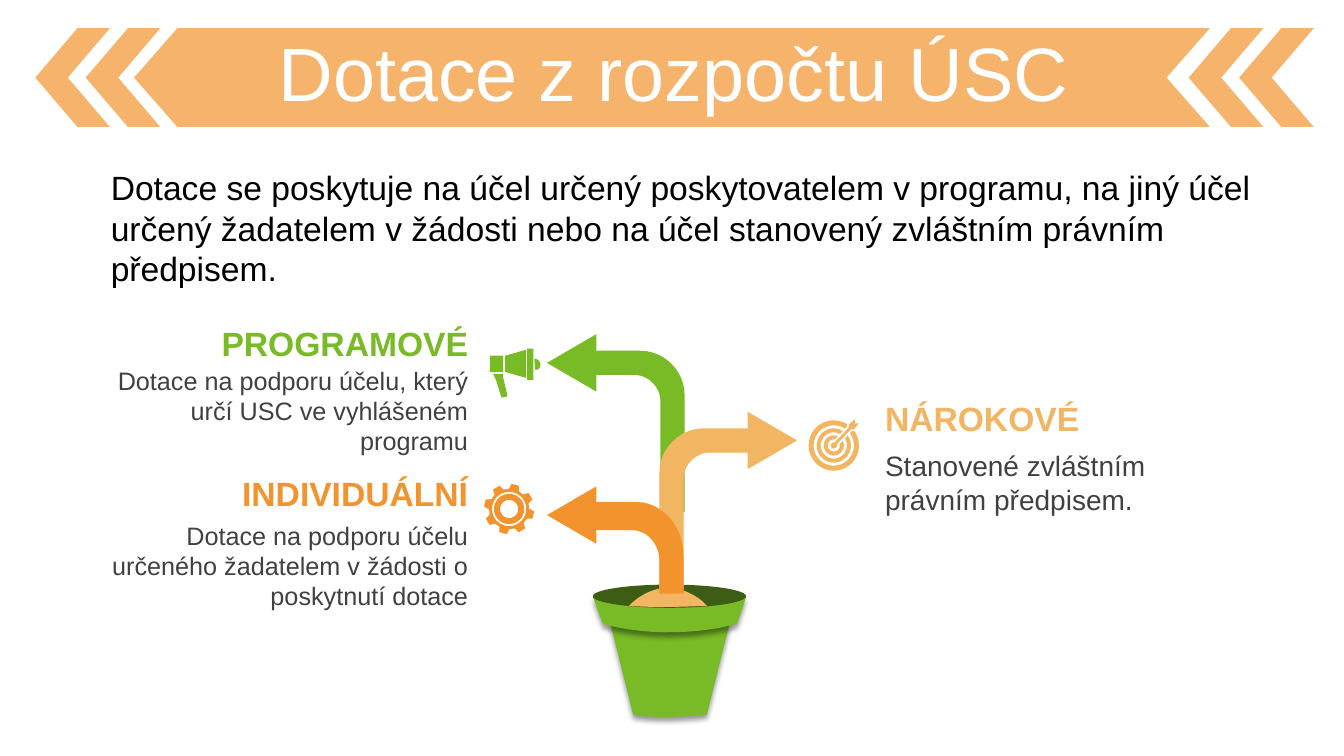
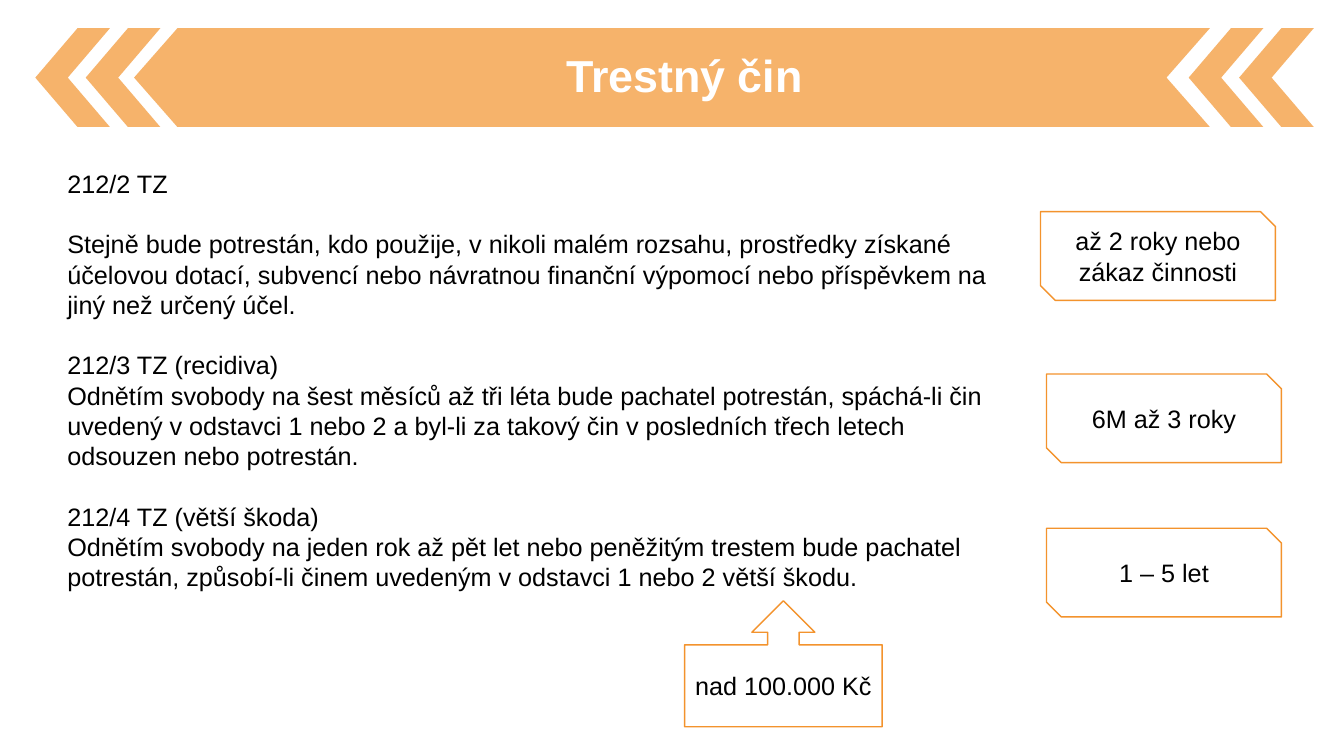
from math import cos, radians, sin

from lxml import etree
from pptx import Presentation
from pptx.dml.color import RGBColor
from pptx.enum.shapes import MSO_SHAPE
from pptx.enum.text import MSO_ANCHOR, PP_ALIGN
from pptx.oxml.ns import qn
from pptx.util import Inches, Pt

ORANGE = RGBColor(0xF3, 0x93, 0x2D)
SAND = RGBColor(0xF2, 0xB6, 0x62)
GREEN = RGBColor(0x79, 0xBA, 0x27)
DARK_GREEN = RGBColor(0x3D, 0x5D, 0x14)
GREY = RGBColor(0x40, 0x40, 0x40)
BLACK = RGBColor(0, 0, 0)
WHITE = RGBColor(0xFF, 0xFF, 0xFF)

LEFT, CENTER, RIGHT = PP_ALIGN.LEFT, PP_ALIGN.CENTER, PP_ALIGN.RIGHT
TOP, MIDDLE = MSO_ANCHOR.TOP, MSO_ANCHOR.MIDDLE
CHEVRON, TRIANGLE, OVAL = MSO_SHAPE.CHEVRON, MSO_SHAPE.ISOSCELES_TRIANGLE, MSO_SHAPE.OVAL
SNIPPED, CALLOUT = MSO_SHAPE.SNIP_2_DIAG_RECTANGLE, MSO_SHAPE.UP_ARROW_CALLOUT

FONT = "Arial"
SLIDE_WIDTH, SLIDE_HEIGHT = 13.33, 7.5
BAND_TOP, BAND_HEIGHT, BAND_OPACITY = 0.28, 0.98, 70
CURVE_STEPS = 12


def polar(center, radius, degrees):
    """Point at a clockwise angle from straight up."""
    angle = radians(degrees)
    return center[0] + radius * sin(angle), center[1] - radius * cos(angle)


def circle(center, radius):
    return [polar(center, radius, degrees) for degrees in range(0, 360, 10)]


def gear(center, teeth, first, outer, root):
    points = []
    for tooth in range(teeth):
        middle = first + tooth * 360 / teeth
        for radius, offset in ((root, -15), (outer, -8.5), (outer, 8.5), (root, 15)):
            points.append(polar(center, radius, middle + offset))
    return points


def box_points(left, top, right, bottom):
    return [(left, top), (right, top), (right, bottom), (left, bottom)]


def flatten(contour):
    """Turn steps of 2 numbers (line) or 6 numbers (cubic curve) into points."""
    points = []
    for step in contour:
        if len(step) == 2:
            points.append(step)
            continue
        start = points[-1]
        first, second, end = step[:2], step[2:4], step[4:]
        for index in range(1, CURVE_STEPS + 1):
            t = index / CURVE_STEPS
            u = 1 - t
            points.append(tuple(
                u ** 3 * a + 3 * u * u * t * b + 3 * u * t * t * c + t ** 3 * d
                for a, b, c, d in zip(start, first, second, end)))
    return points


class Designer:
    def __init__(self):
        self.deck = Presentation()
        self.deck.slide_width = Inches(SLIDE_WIDTH)
        self.deck.slide_height = Inches(SLIDE_HEIGHT)
        self.page = None

    def new_page(self):
        self.page = self.deck.slides.add_slide(self.deck.slide_layouts[6])
        for left in (0.35, 0.85, 11.79, 12.29):
            chevron = self.shape(CHEVRON, (left, BAND_TOP, 0.74, BAND_HEIGHT), ORANGE,
                                 rotation=180, opacity=BAND_OPACITY)
            chevron.adjustments[0] = 0.565
        bottom, middle = BAND_TOP + BAND_HEIGHT, BAND_TOP + BAND_HEIGHT / 2
        self.outline([[(1.76, BAND_TOP), (12, BAND_TOP), (11.57, middle),
                       (12, bottom), (1.76, bottom), (1.33, middle)]],
                     ORANGE, opacity=BAND_OPACITY)

    def paint(self, shape, fill, line=None, line_width=1, opacity=None):
        shape.shadow.inherit = False
        shape.fill.solid()
        shape.fill.fore_color.rgb = fill
        if opacity:
            color = shape._element.spPr.find(qn("a:solidFill"))[0]
            etree.SubElement(color, qn("a:alpha"), val=str(opacity * 1000))
        if line is None:
            shape.line.fill.background()
        else:
            shape.line.color.rgb = line
            shape.line.width = Pt(line_width)
        return shape

    def shape(self, kind, place, fill, rotation=0, **style):
        shape = self.page.shapes.add_shape(kind, *map(Inches, place))
        shape.rotation = rotation
        return self.paint(shape, fill, **style)

    def outline(self, contours, fill, **style):
        """Freeform of closed contours; a contour inside another cuts a hole."""
        builder = None
        for contour in contours:
            points = [(Inches(x), Inches(y)) for x, y in flatten(contour)]
            if builder is None:
                builder = self.page.shapes.build_freeform(*points[0])
            else:
                builder.move_to(*points[0])
            builder.add_line_segments(points[1:], close=True)
        return self.paint(builder.convert_to_shape(), fill, **style)

    def drop_shadow(self, shape):
        effects = shape._element.spPr.find(qn("a:effectLst"))
        shadow = etree.SubElement(effects, qn("a:outerShdw"), blurRad=str(Pt(4)),
                                  dist=str(Pt(3)), dir="5400000", rotWithShape="0")
        color = etree.SubElement(shadow, qn("a:srgbClr"), val=str(BLACK))
        etree.SubElement(color, qn("a:alpha"), val="40000")

    def add_span(self, para, text, size, color, bold=False, align=LEFT):
        para.alignment = align
        span = para.add_run()
        span.text = text
        span.font.name = FONT
        span.font.size = Pt(size)
        span.font.bold = bold
        span.font.color.rgb = color

    def text(self, place, text, size, color, bold=False, align=LEFT, anchor=TOP):
        box = self.page.shapes.add_textbox(*map(Inches, place))
        box.text_frame.word_wrap = True
        box.text_frame.vertical_anchor = anchor
        self.add_span(box.text_frame.paragraphs[0], text, size, color, bold, align)
        return box

    def title(self, place, text, size, bold=False):
        box = self.text(place, text, size, WHITE, bold, CENTER, MIDDLE)
        para = box.text_frame.paragraphs[0]
        para.line_spacing = 0.9
        para.space_before = Pt(10)

    def articles(self, place, paragraphs, size, gap):
        """Paragraphs given as (text, whether a gap precedes it)."""
        box = self.page.shapes.add_textbox(*map(Inches, place))
        frame = box.text_frame
        frame.word_wrap = True
        for index, (text, spaced) in enumerate(paragraphs):
            para = frame.add_paragraph() if index else frame.paragraphs[0]
            para.space_before = Pt(gap if spaced else 0)
            self.add_span(para, text, size, BLACK)

    def label(self, kind, place, text):
        shape = self.shape(kind, place, WHITE, line=ORANGE)
        shape.text_frame.word_wrap = True
        shape.text_frame.vertical_anchor = MIDDLE
        self.add_span(shape.text_frame.paragraphs[0], text, 18, BLACK, align=CENTER)

    def branch(self, stem, head_center, rotation, color):
        self.outline([stem], color)
        x, y = head_center
        width, height = 0.57, 0.49
        self.shape(TRIANGLE, (x - width / 2, y - height / 2, width, height), color, rotation)

    def flowerpot(self):
        body = [(7.24, 6.17), (7.01, 7.09), (6.77, 7.11, 6.53, 7.13, 6.28, 7.09), (6.05, 6.17)]
        rim = [(7.4, 5.92), (7.31, 6.19), (6.97, 6.28, 6.45, 6.32, 5.98, 6.19), (5.88, 5.92)]
        for part in (body, rim):
            self.drop_shadow(self.outline([part], GREEN))
        self.shape(OVAL, (5.88, 5.8, 1.52, 0.23), DARK_GREEN)
        soil = [(6.24, 6.01), (6.33, 5.91, 6.49, 5.83, 6.62, 5.83),
                (6.76, 5.83, 6.93, 5.91, 7.01, 6.01), (6.76, 6.02, 6.5, 6.03, 6.24, 6.01)]
        self.outline([soil], SAND)

    def branches(self):
        tall = [(5.87, 3.48), (6.35, 3.48), (6.59, 3.48, 6.79, 3.68, 6.79, 3.92), (6.79, 5.08),
                (6.55, 5.08), (6.55, 3.98), (6.55, 3.84, 6.43, 3.72, 6.29, 3.72), (5.87, 3.72)]
        drop = 0.77
        mirrored = [tuple(value + drop if index % 2 else SLIDE_WIDTH - value
                          for index, value in enumerate(step)) for step in tall]
        short = [(5.7, 4.98), (6.31, 4.98), (6.57, 4.98, 6.78, 5.22, 6.78, 5.52), (6.78, 5.89),
                 (6.54, 5.89), (6.54, 5.56), (6.54, 5.4, 6.42, 5.26, 6.27, 5.26), (5.7, 5.26)]
        self.branch(tall, (5.67, 3.6), 270, GREEN)
        self.branch(mirrored, (SLIDE_WIDTH - 5.67, 3.6 + drop), 90, SAND)
        self.branch(short, (5.67, 5.11), 270, ORANGE)

    def megaphone_icon(self):
        handle = [(4.89, 3.71), (4.99, 3.71), (4.99, 3.74), (5.03, 3.91),
                  (5.04, 3.92, 5.03, 3.93, 5.02, 3.94), (4.99, 3.94),
                  (4.98, 3.95, 4.97, 3.94, 4.97, 3.93), (4.92, 3.77)]
        mouth = [(5.3, 3.56), (5.33, 3.56, 5.36, 3.58, 5.36, 3.62),
                 (5.36, 3.65, 5.34, 3.67, 5.31, 3.67)]
        horn = [(5.22, 3.47), (5.22, 3.75), (5.01, 3.69), (5.01, 3.53)]
        self.outline([handle, mouth, horn, box_points(4.86, 3.53, 4.99, 3.69),
                      box_points(5.23, 3.46, 5.29, 3.77)], GREEN)

    def target_icon(self):
        center = (8.27, 4.42)
        self.outline([circle(center, radius) for radius in (0.25, 0.2, 0.17, 0.13, 0.1, 0.06)],
                     SAND)
        arrow = [(8.48, 4.16), (8.48, 4.2), (8.52, 4.2), (8.47, 4.26), (8.44, 4.26),
                 (8.28, 4.43), (8.26, 4.41), (8.42, 4.24), (8.42, 4.21)]
        self.outline([arrow], WHITE, line=WHITE, line_width=2.5)
        self.outline([arrow], SAND)
        self.outline([circle(center, 0.03)], SAND)

    def gear_icon(self):
        center = (5.05, 5.05)
        rings = [circle(center, radius) for radius in (0.17, 0.15, 0.09)]
        self.outline([gear(center, 8, 14, 0.25, 0.2)] + rings, ORANGE)


def grant_types(designer):
    designer.new_page()
    designer.title((0.35, 0.37, 12.66, 0.79), "Dotace z rozpočtu ÚSC", 54)
    designer.flowerpot()
    designer.text((1, 1.61, 11.85, 1.31),
                  "Dotace se poskytuje na účel určený poskytovatelem v programu, na jiný účel "
                  "určený žadatelem v žádosti nebo na účel stanovený zvláštním právním předpisem.",
                  24, BLACK)
    kinds = [
        ("NÁROKOVÉ", SAND, 8.68, 3.9, 4.4, 3.86, 20, LEFT,
         "Stanovené zvláštním právním předpisem."),
        ("PROGRAMOVÉ", GREEN, 0.92, 3.15, 3.57, 3.82, 18, RIGHT,
         "Dotace na podporu účelu, který určí USC ve vyhlášeném programu"),
        ("INDIVIDUÁLNÍ", ORANGE, 0.92, 4.64, 5.11, 3.82, 18, RIGHT,
         "Dotace na podporu účelu určeného žadatelem v žádosti o poskytnutí dotace"),
    ]
    for name, color, left, name_top, detail_top, width, size, align, detail in kinds:
        designer.text((left, detail_top, width, 1.01), detail, size, GREY, align=align)
        designer.text((left, name_top, width, 0.5), name, 24, color, True, align)
    designer.branches()
    designer.megaphone_icon()
    designer.target_icon()
    designer.gear_icon()


def criminal_offence(designer):
    designer.new_page()
    designer.title((0.46, 0.31, 12.66, 0.92), "Trestný čin", 32, True)
    designer.articles((0.57, 1.62, 9.66, 4.34), [
        ("212/2 TZ", False),
        ("Stejně bude potrestán, kdo použije, v nikoli malém rozsahu, prostředky získané "
         "účelovou dotací, subvencí nebo návratnou finanční výpomocí nebo příspěvkem na "
         "jiný než určený účel.", True),
        ("212/3 TZ (recidiva)", True),
        ("Odnětím svobody na šest měsíců až tři léta bude pachatel potrestán, spáchá-li čin "
         "uvedený v odstavci 1 nebo 2 a byl-li za takový čin v posledních třech letech "
         "odsouzen nebo potrestán.", False),
        ("212/4 TZ (větší škoda)", True),
        ("Odnětím svobody na jeden rok až pět let nebo peněžitým trestem bude pachatel "
         "potrestán, způsobí-li činem uvedeným v odstavci 1 nebo 2 větší škodu.", False),
    ], 18, 21.6)
    for left, top, penalty in ((10.32, 2.1, "až 2 roky nebo zákaz činnosti"),
                               (10.38, 3.71, "6M až 3 roky"),
                               (10.38, 5.24, "1 – 5 let")):
        designer.label(SNIPPED, (left, top, 2.33, 0.88), penalty)
    designer.label(CALLOUT, (6.79, 5.96, 1.96, 1.25), "nad 100.000 Kč")


def main():
    designer = Designer()
    grant_types(designer)
    criminal_offence(designer)
    designer.deck.save("out.pptx")


if __name__ == "__main__":
    main()
